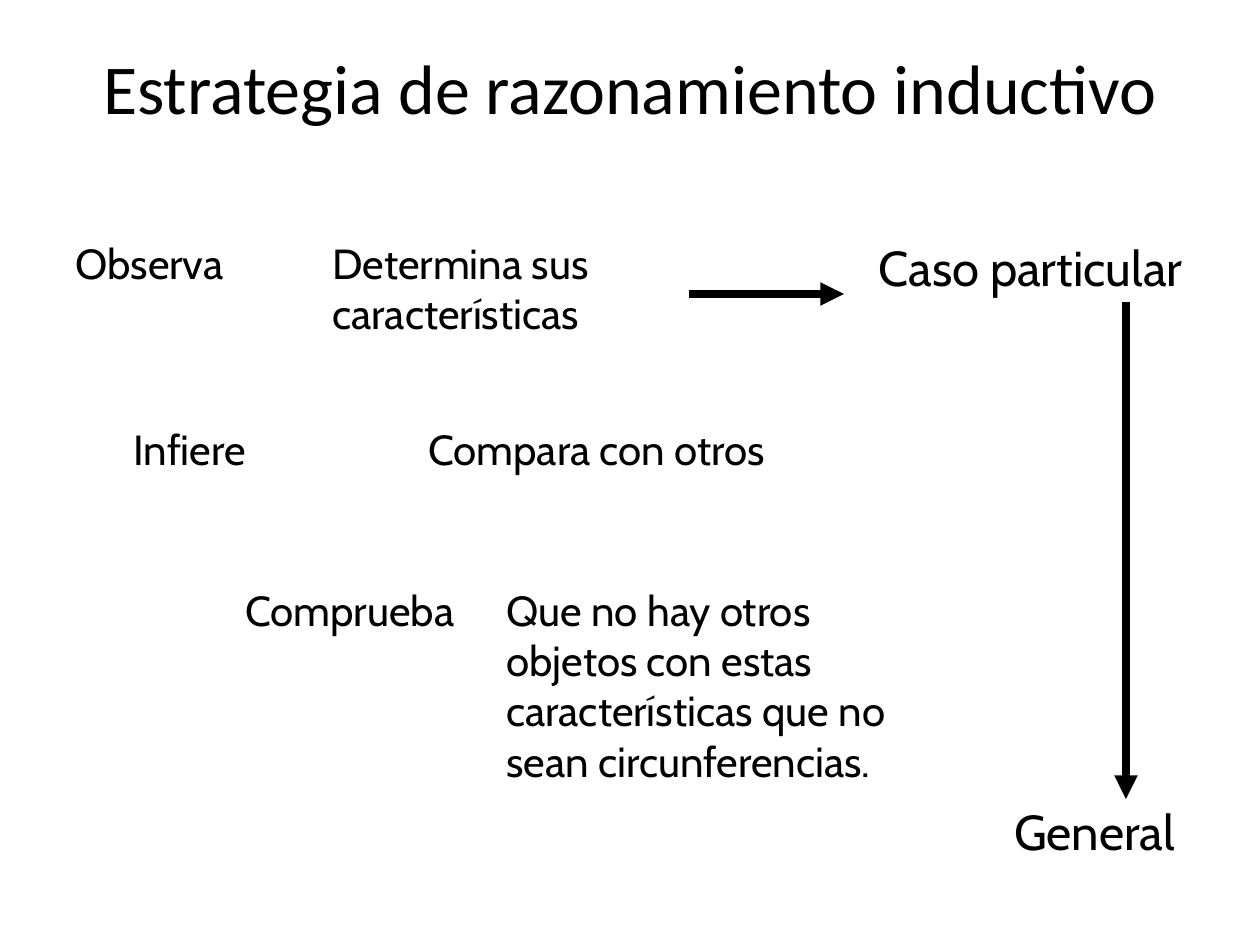
"""Build the slide on the inductive reasoning strategy."""
from dataclasses import dataclass

from lxml import etree
from pptx import Presentation
from pptx import util as u
from pptx.dml.color import RGBColor
from pptx.enum import shapes, text
from pptx.oxml.ns import qn

PX_PER_INCH = 126


@dataclass(frozen=True)
class Theme:
    ink: RGBColor = RGBColor(0, 0, 0)
    title_font: str = "Calibri"
    body_font: str = "Cabin"
    title_size: int = 40
    step_size: int = 24
    scope_size: int = 28
    arrow_width: float = 4.5


@dataclass(frozen=True)
class Label:
    words: str
    x: int
    y: int
    w: int
    h: int
    size: int


@dataclass(frozen=True)
class Arrow:
    x1: int
    y1: int
    x2: int
    y2: int


THEME = Theme()
OBSERVE_Y, INFER_Y, CHECK_Y, GENERAL_Y = 231, 417, 578, 795
LINE_H, SCOPE_H = 63, 72

LABELS = [
    Label("Infiere", 121, INFER_Y, 223, LINE_H, THEME.step_size),
    Label("Comprueba", 233, CHECK_Y, 242, LINE_H, THEME.step_size),
    Label("Observa", 63, OBSERVE_Y, 189, LINE_H, THEME.step_size),
    Label("Determina sus características", 320, OBSERVE_Y, 310, 113, THEME.step_size),
    Label("Compara con otros", 416, INFER_Y, 407, LINE_H, THEME.step_size),
    Label("Que no hay otros objetos con estas características que no sean "
          "circunferencias.", 494, CHECK_Y, 465, 214, THEME.step_size),
    Label("Caso particular", 866, OBSERVE_Y, 360, SCOPE_H, THEME.scope_size),
    Label("General", 1002, GENERAL_Y, 217, SCOPE_H, THEME.scope_size),
]
ARROWS = [Arrow(689, 294, 844, 294), Arrow(1126, 302, 1126, 799)]


def px(n: int) -> u.Emu:
    """Turn pixels into EMU."""
    return u.Emu(round(n * u.Inches(1) / PX_PER_INCH))


def write(sp, words: str, *, size: int, font: str = THEME.body_font,
          align=text.PP_ALIGN.LEFT, fit=text.MSO_AUTO_SIZE.SHAPE_TO_FIT_TEXT) -> None:
    """Put one formatted, top-anchored paragraph into a shape."""
    tf = sp.text_frame
    tf.word_wrap = True
    tf.auto_size = fit
    tf.vertical_anchor = text.MSO_ANCHOR.TOP
    p = tf.paragraphs[0]
    p.alignment = align
    r = p.add_run()
    r.text = words
    r.font.size = u.Pt(size)
    r.font.name = font
    r.font.color.rgb = THEME.ink


def add_title(slide, words: str) -> None:
    """Place and fill the title placeholder."""
    sp = slide.shapes.title
    sp.left, sp.top, sp.width, sp.height = map(px, (63, 38, 1134, 157))
    write(sp, words, size=THEME.title_size, font=THEME.title_font,
          align=text.PP_ALIGN.CENTER, fit=text.MSO_AUTO_SIZE.NONE)


def add_label(slide, label: Label) -> None:
    """Draw one text label."""
    sp = slide.shapes.add_textbox(*map(px, (label.x, label.y, label.w, label.h)))
    write(sp, label.words, size=label.size)


def add_arrow(slide, arrow: Arrow) -> None:
    """Draw one straight line with a triangular head at its end."""
    sp = slide.shapes.add_connector(
        shapes.MSO_CONNECTOR.STRAIGHT,
        *map(px, (arrow.x1, arrow.y1, arrow.x2, arrow.y2)))
    sp.line.color.rgb = THEME.ink
    sp.line.width = u.Pt(THEME.arrow_width)
    etree.SubElement(sp.line._get_or_add_ln(), qn("a:tailEnd"), type="triangle")
    etree.SubElement(sp._element.spPr, qn("a:effectLst"))


def main() -> None:
    """Build and save the slide."""
    prs = Presentation()
    prs.slide_width, prs.slide_height = px(1260), px(945)
    slide = prs.slides.add_slide(prs.slide_layouts[5])
    add_title(slide, "Estrategia de razonamiento inductivo")
    for label in LABELS:
        add_label(slide, label)
    for arrow in ARROWS:
        add_arrow(slide, arrow)
    prs.save("out.pptx")


if __name__ == "__main__":
    main()
